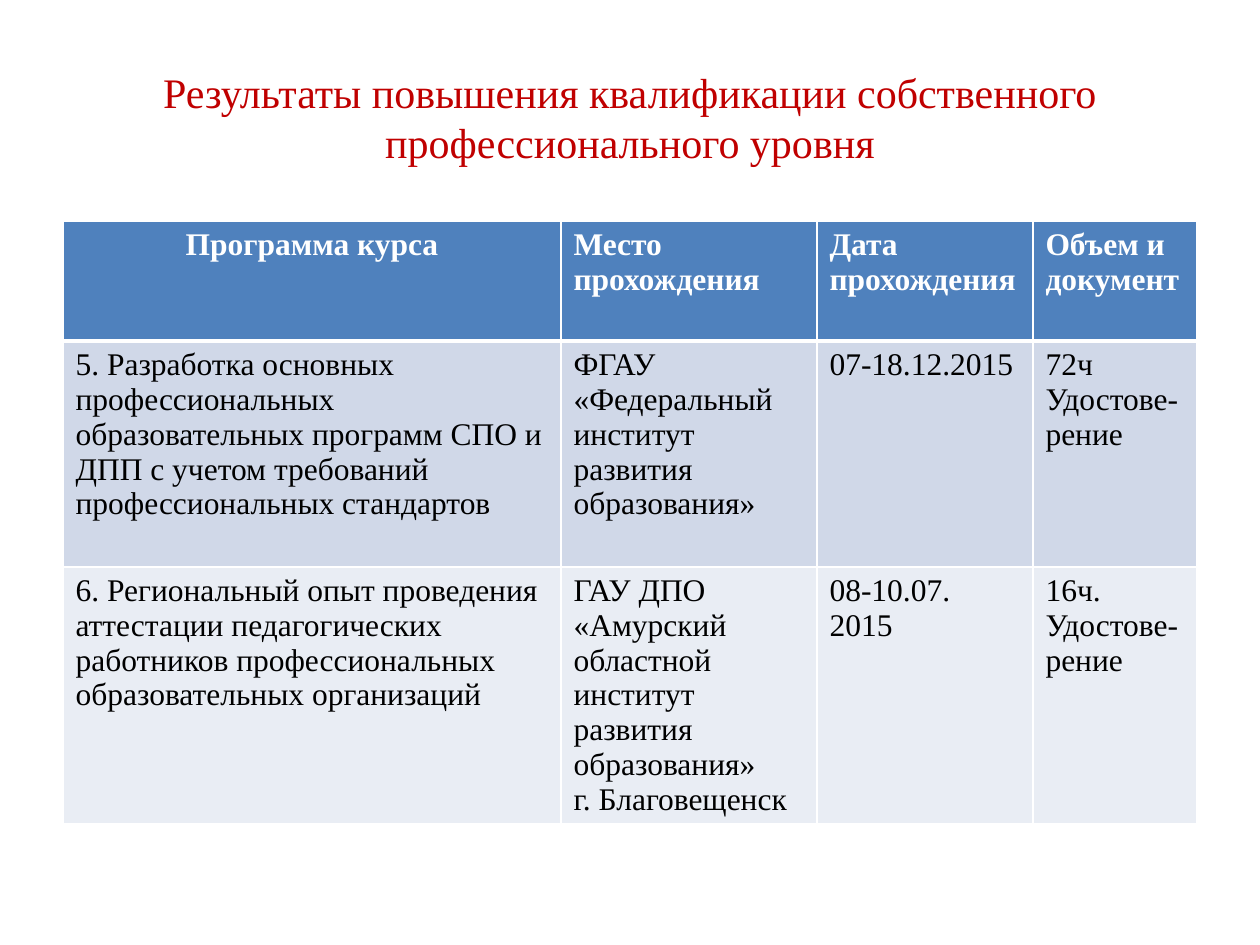
from lxml import etree
from pptx import Presentation
from pptx import util as u
from pptx.dml.color import RGBColor
from pptx.enum import text
from pptx.oxml.ns import qn

SCALE = 914400 / 126
FONT = "Times New Roman"
RED = RGBColor(0xC0, 0x00, 0x00)
BLUE = RGBColor(0x4F, 0x81, 0xBD)
PALE = RGBColor(0xD0, 0xD8, 0xE8)
LIGHT = RGBColor(0xE9, 0xED, 0xF4)
WHITE = RGBColor(0xFF, 0xFF, 0xFF)
BLACK = RGBColor(0x00, 0x00, 0x00)

TITLE = "Результаты повышения квалификации собственного профессионального уровня"
WIDTHS = [498, 256, 216, 164]
HEIGHTS = [120, 226, 256]
FILLS = [BLUE, PALE, LIGHT]
ROWS = [
    ["Программа курса", "Место прохождения", "Дата прохождения", "Объем и документ"],
    ["5. Разработка основных\nпрофессиональных образовательных программ СПО и ДПП "
     "с учетом требований профессиональных стандартов",
     "ФГАУ «Федеральный институт развития образования»",
     "07-18.12.2015",
     "72ч\nУдостове-\nрение"],
    ["6. Региональный опыт проведения аттестации педагогических работников "
     "профессиональных образовательных организаций",
     "ГАУ ДПО «Амурский областной институт развития образования»\nг. Благовещенск",
     "08-10.07. 2015",
     "16ч.\nУдостове-рение"],
]


def px(num):
    return u.Emu(round(num * SCALE))


def style(frame, size, color, bold=False, align=text.PP_ALIGN.LEFT):
    for par in frame.paragraphs:
        par.alignment = align
        for run in par.runs:
            run.font.name = FONT
            run.font.size = u.Pt(size)
            run.font.bold = bold
            run.font.color.rgb = color


def add_title(slide):
    title = slide.shapes.title
    title.left, title.top, title.width, title.height = map(px, (63, 38, 1134, 157))
    frame = title.text_frame
    frame.text = TITLE
    frame.vertical_anchor = text.MSO_ANCHOR.MIDDLE
    style(frame, 24, RED, align=text.PP_ALIGN.CENTER)


def add_edge(cell, side, width):
    props = cell._tc.get_or_add_tcPr()
    line = etree.SubElement(props, qn("a:" + side), w=str(u.Pt(width)))
    fill = etree.SubElement(line, qn("a:solidFill"))
    etree.SubElement(fill, qn("a:srgbClr"), val=str(WHITE))


def fill_cell(cell, words, row, col):
    head = row == 0
    cell.text_frame.text = words
    mid = head and col == 0
    align = text.PP_ALIGN.CENTER if mid else text.PP_ALIGN.LEFT
    style(cell.text_frame, 18, WHITE if head else BLACK, head, align)
    for side in ("lnL", "lnR", "lnT", "lnB"):
        thick = (row, side) in ((0, "lnB"), (1, "lnT"))
        add_edge(cell, side, 3 if thick else 1)
    cell.fill.solid()
    cell.fill.fore_color.rgb = FILLS[row]


def add_grid(slide):
    frame = slide.shapes.add_table(
        len(ROWS), len(WIDTHS), px(63), px(221), px(sum(WIDTHS)), px(sum(HEIGHTS)))
    table = frame.table
    for col, width in enumerate(WIDTHS):
        table.columns[col].width = px(width)
    for row, height in enumerate(HEIGHTS):
        table.rows[row].height = px(height)
        for col, words in enumerate(ROWS[row]):
            fill_cell(table.cell(row, col), words, row, col)


def main():
    deck = Presentation()
    deck.slide_width, deck.slide_height = px(1260), px(945)
    slide = deck.slides.add_slide(deck.slide_layouts[5])
    add_title(slide)
    add_grid(slide)
    deck.save("out.pptx")


if __name__ == "__main__":
    main()
